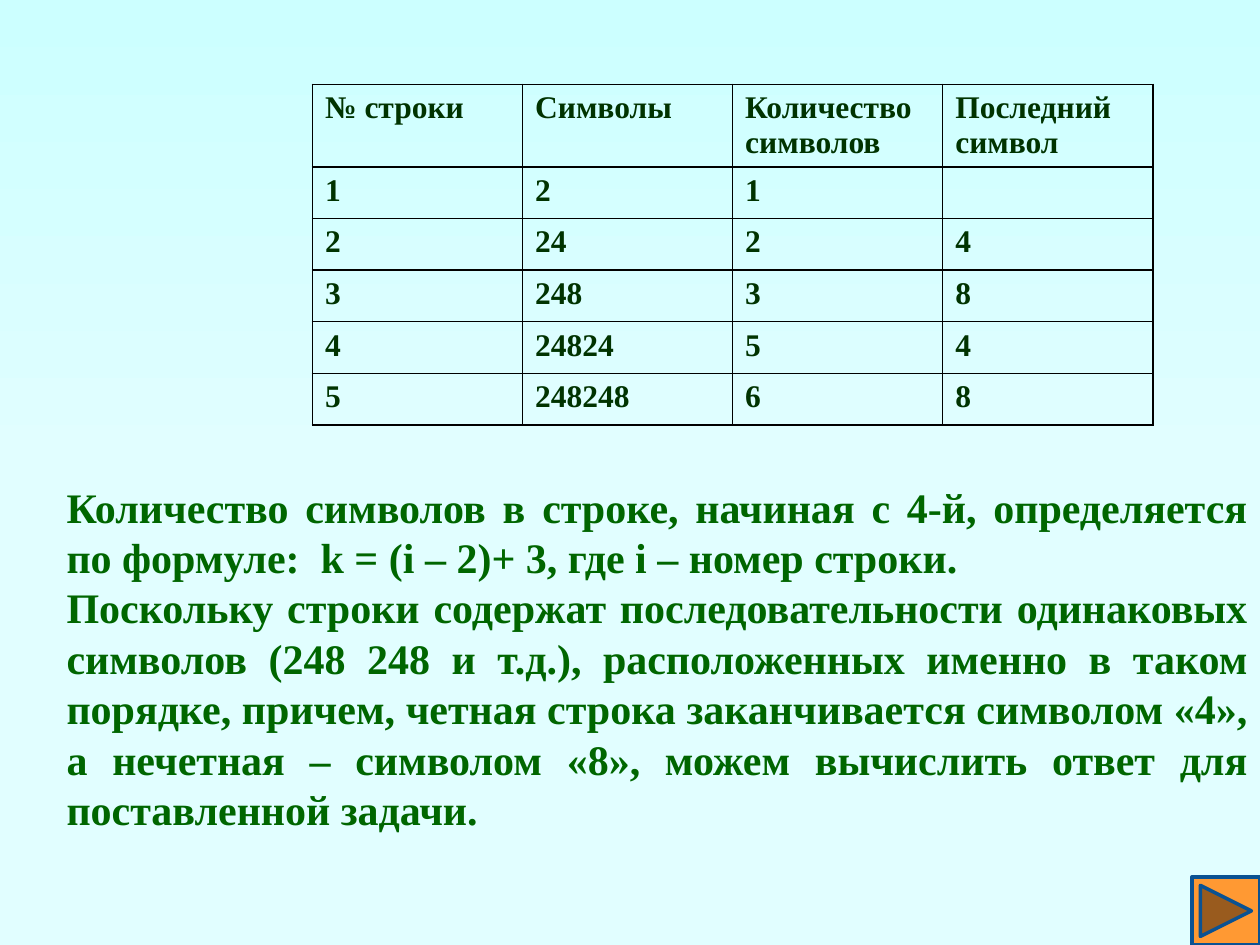
"""Build a slide with a table of string lengths and the rule drawn from it."""
from lxml import etree
from pptx import Presentation
from pptx import util as u
from pptx.dml.color import RGBColor
from pptx.enum import shapes, text
from pptx.oxml.ns import qn

ROWS = [
    ("№ строки", "Символы", "Количество символов", "Последний символ"),
    ("1", "2", "1", ""),
    ("2", "24", "2", "4"),
    ("3", "248", "3", "8"),
    ("4", "24824", "5", "4"),
    ("5", "248248", "6", "8"),
]
NOTES = [
    "Количество символов в строке, начиная с 4-й, определяется по формуле:  "
    "k = (i – 2)+ 3, где i – номер строки.",
    "Поскольку строки содержат последовательности одинаковых символов "
    "(248 248 и т.д.), расположенных именно в таком порядке, причем, четная "
    "строка заканчивается символом «4», а нечетная – символом «8», можем "
    "вычислить ответ для поставленной задачи.",
]
COLORS = {"top": "CCFFFF", "base": "E1FEFF", "cell": "003300", "note": "006600",
          "grid": "000000", "button": "FF9933", "edge": "0B5292"}
FONT = "Times New Roman"


def color(name):
    return RGBColor.from_string(COLORS[name])


def style(para, size, name):
    font = para.font
    font.name, font.size, font.bold = FONT, u.Pt(size), True
    font.color.rgb = color(name)


def border(cell):
    props = cell._tc.get_or_add_tcPr()
    for i, side in enumerate(("a:lnL", "a:lnR", "a:lnT", "a:lnB")):
        line = etree.Element(qn(side), w=str(u.Pt(1)))
        fill = etree.SubElement(line, qn("a:solidFill"))
        etree.SubElement(fill, qn("a:srgbClr"), val=COLORS["grid"])
        props.insert(i, line)


def add_back(slide):
    fill = slide.background.fill
    fill.gradient()
    fill.gradient_angle = 270
    for stop, name, place in zip(fill.gradient_stops, ("top", "base"), (0, 0.5)):
        stop.color.rgb = color(name)
        stop.position = place


def add_grid(slide):
    frame = slide.shapes.add_table(
        len(ROWS), len(ROWS[0]), u.Inches(2.48), u.Inches(0.67),
        u.Inches(6.67), u.Inches(2.73))
    table = frame.table
    table.first_row = table.horz_banding = False
    for row, words in zip(table.rows, ROWS):
        row.height = u.Inches(0.41)
        for cell, word in zip(row.cells, words):
            cell.text = word
            cell.fill.background()
            style(cell.text_frame.paragraphs[0], 18, "cell")
            border(cell)
    table.rows[0].height = u.Inches(0.65)


def add_notes(slide):
    box = slide.shapes.add_textbox(
        u.Inches(0.43), u.Inches(3.77), u.Inches(9.57), u.Inches(2.93))
    frame = box.text_frame
    frame.word_wrap = True
    frame.auto_size = text.MSO_AUTO_SIZE.SHAPE_TO_FIT_TEXT
    frame.text = "\n".join(NOTES)
    for para in frame.paragraphs:
        para.alignment = text.PP_ALIGN.JUSTIFY
        style(para, 24, "note")


def add_button(slide):
    side = u.Inches(0.54)
    button = slide.shapes.add_shape(
        shapes.MSO_SHAPE.ACTION_BUTTON_FORWARD_OR_NEXT,
        u.Inches(9.46), u.Inches(6.96), side, side)
    button.shadow.inherit = False
    button.fill.solid()
    button.fill.fore_color.rgb = color("button")
    button.line.color.rgb = color("edge")
    button.line.width = u.Pt(2)


def main():
    deck = Presentation()
    deck.slide_width, deck.slide_height = u.Inches(10), u.Inches(7.5)
    slide = deck.slides.add_slide(deck.slide_layouts[6])
    add_back(slide)
    add_grid(slide)
    add_notes(slide)
    add_button(slide)
    deck.save("out.pptx")


if __name__ == "__main__":
    main()
